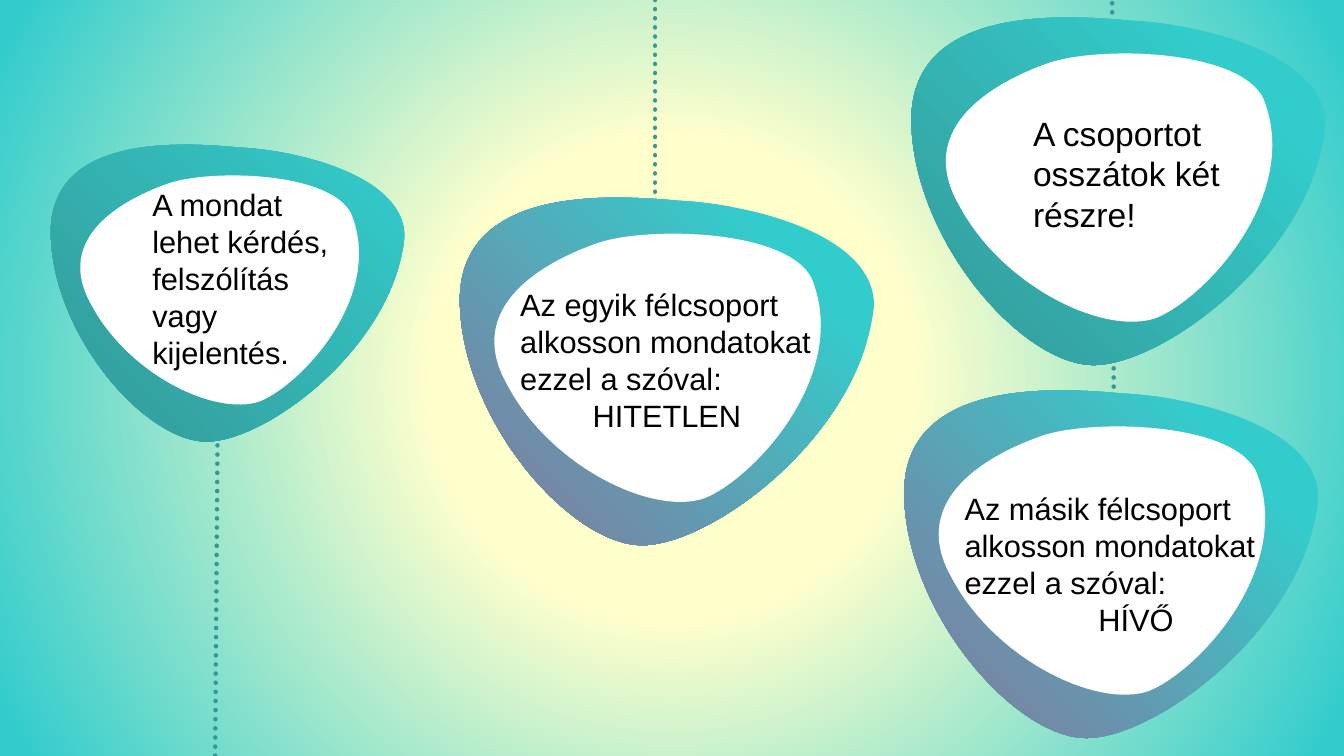
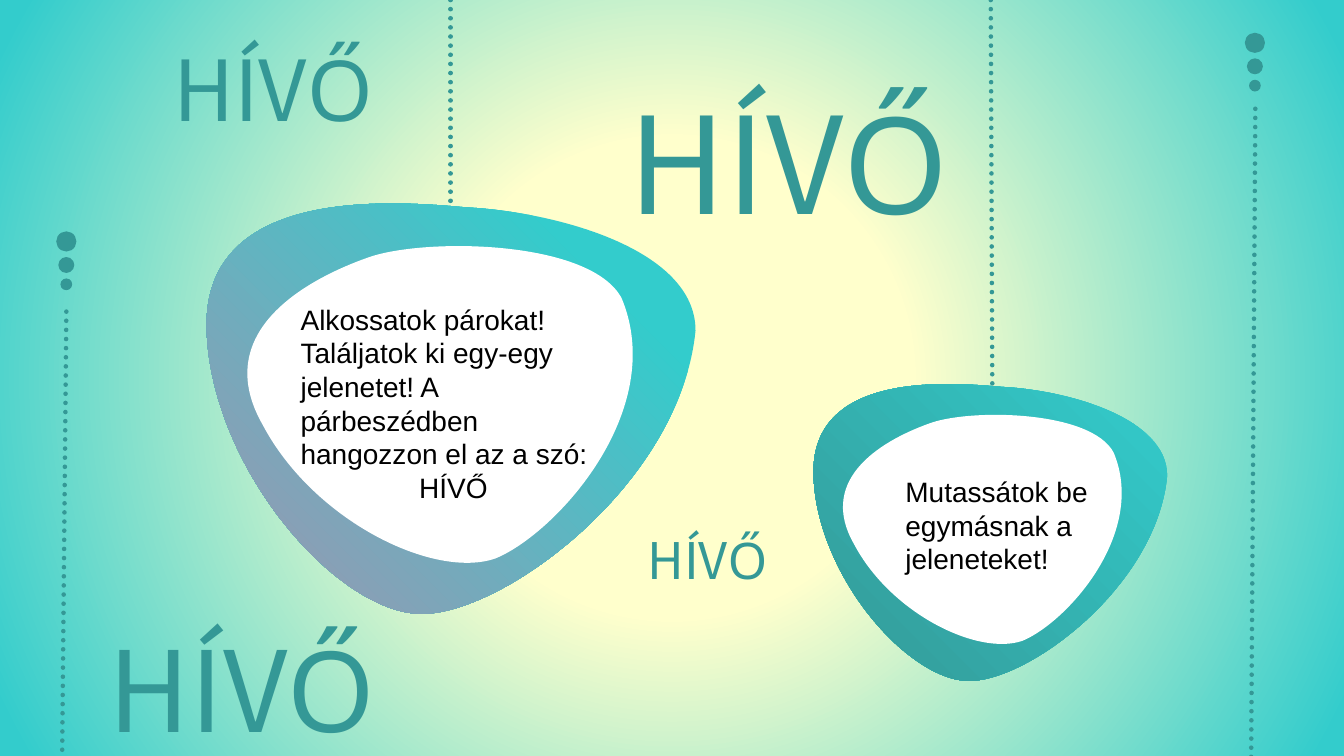
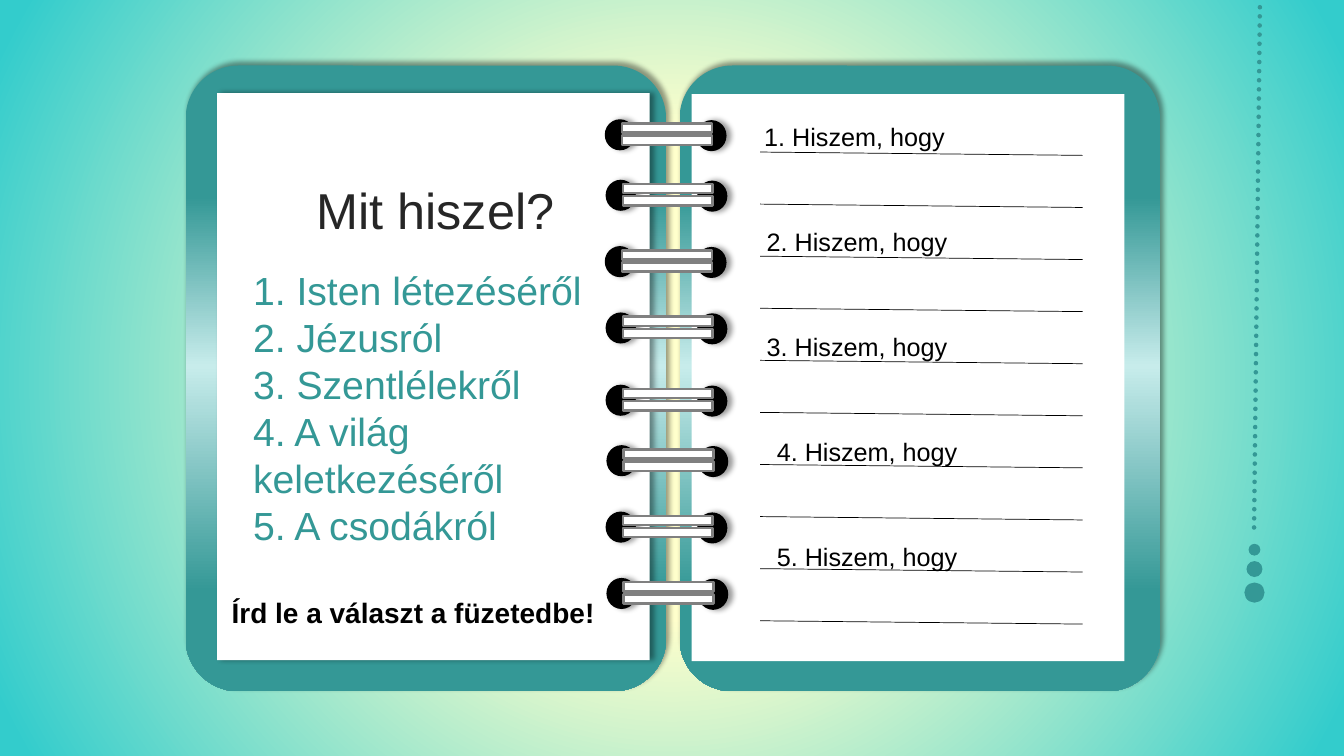
from dataclasses import dataclass

from lxml.etree import SubElement
from pptx import Presentation
from pptx.dml.color import RGBColor
from pptx.enum.dml import MSO_LINE
from pptx.enum.shapes import MSO_CONNECTOR, MSO_SHAPE
from pptx.enum.text import MSO_ANCHOR, PP_ALIGN
from pptx.oxml.ns import qn
from pptx.util import Emu, Pt

CELL = 76200  # the slide is a grid of 160 columns by 90 rows
COLS, ROWS = 160, 90

# Pebble outlines as shares of their own box: start, then three points per curve
PEBBLE_RATIO = 0.84
CORE_TILT = 332.1
RIM = [(0, .31), (-.01, -.03), (.35, -.01), (.53, .01), (.71, .02), (1, .11), (1, .31),
       (.97, .68), (.61, 1), (.44, 1), (.27, 1), (.01, .65), (0, .31)]
CORE = [(0, .31), (-.01, -.02), (.29, -.02), (.46, .01), (.62, .04), (1, .28), (1, .48),
        (.97, .85), (.55, 1.02), (.38, 1), (.21, .97), (0, .64), (0, .31)]


@dataclass(frozen=True)
class Theme:
    cream: str = "FFFFCC"
    aqua: str = "33CCCC"
    teal: str = "349896"
    mist: str = "C7ECEB"
    plum: str = "86759B"
    lilac: str = "A093B0"
    white: str = "FFFFFF"
    black: str = "000000"
    ink: str = "262626"
    grey: str = "808080"
    font: str = "Arial"
    word_font: str = "Noto Sans CJK JP"
    title: int = 36
    listing: int = 28
    large: int = 24
    body: int = 22
    small: int = 20
    label: int = 18
    dotted: float = 3.25
    hairline: float = 0.5
    wire: float = 1.75


def grid(*lengths):
    return [Emu(round(v * CELL)) for v in lengths]


def rgb(colour):
    return RGBColor.from_string(colour)


def fill_gradient(fill, owner, stops, angle=None):
    """Linear gradient at a clockwise angle, or circular from the centre."""
    fill.gradient()
    grad = owner.find(".//" + qn("a:gradFill"))
    grad.clear()
    grad.set("rotWithShape", "1")
    gs_list = SubElement(grad, qn("a:gsLst"))
    for pos, colour in stops:
        gs = SubElement(gs_list, qn("a:gs"), pos=str(pos * 1000))
        SubElement(gs, qn("a:srgbClr"), val=colour)
    if angle is None:
        circle = SubElement(grad, qn("a:path"), path="circle")
        SubElement(circle, qn("a:fillToRect"), dict.fromkeys("ltrb", "50000"))
    else:
        SubElement(grad, qn("a:lin"), ang=str(angle * 60000), scaled="0")


class Deck:
    def __init__(self, theme):
        self.t = theme
        self.prs = Presentation()
        self.prs.slide_width, self.prs.slide_height = grid(COLS, ROWS)
        master = self.prs.slide_master
        fill_gradient(master.background.fill, master._element,
                      [(31, theme.cream), (97, theme.aqua)])
        self.slide = None

    def new_slide(self, titled=False):
        self.slide = self.prs.slides.add_slide(self.prs.slide_layouts[5 if titled else 6])

    def finish(self, sp, colour=None, stops=None, angle=0, shadow=None, line=None):
        """Fill, outline and shadow of a shape."""
        sp.shadow.inherit = False
        if stops:
            fill_gradient(sp.fill, sp._element.spPr, stops, angle)
        else:
            sp.fill.solid()
            sp.fill.fore_color.rgb = rgb(colour)
        if line:
            sp.line.color.rgb = rgb(line)
            sp.line.width = Pt(self.t.wire)
        else:
            sp.line.fill.background()
        if shadow is not None:
            effects = sp._element.spPr.find(qn("a:effectLst"))
            outer = SubElement(effects, qn("a:outerShdw"), blurRad="50800", dist="38100",
                               dir=str(shadow * 60000), rotWithShape="0")
            clr = SubElement(outer, qn("a:srgbClr"), val=self.t.black)
            SubElement(clr, qn("a:alpha"), val="40000")

    def shape(self, kind, box, **style):
        sp = self.slide.shapes.add_shape(kind, *grid(*box))
        self.finish(sp, **style)
        return sp

    def outline(self, points, box, **style):
        """A closed chain of cubic curves inside a box."""
        x, y, w, h = grid(*box)
        builder = self.slide.shapes.build_freeform(x, y, scale=1.0)
        builder.add_line_segments([(x + w, y), (x + w, y + h), (x, y + h)], close=True)
        sp = builder.convert_to_shape()
        curve = sp._element.spPr.find(".//" + qn("a:path"))
        for child in list(curve):
            curve.remove(child)
        steps = [("a:moveTo", points[:1])]
        steps += [("a:cubicBezTo", points[i:i + 3]) for i in range(1, len(points), 3)]
        for tag, spots in steps:
            step = SubElement(curve, qn(tag))
            for px, py in spots:
                SubElement(step, qn("a:pt"), x=str(round(px * w)), y=str(round(py * h)))
        SubElement(curve, qn("a:close"))
        self.finish(sp, **style)
        return sp

    def pebble(self, x, y, w, deep, start=18):
        h = w * PEBBLE_RATIO
        self.outline(RIM, (x, y, w, h), stops=[(start, self.t.aqua), (100, deep)], angle=135)
        core = self.outline(CORE, (x + .13 * w, y + .06 * h, .77 * w, .8 * h),
                            colour=self.t.white)
        core.rotation = CORE_TILT

    def line(self, x1, y1, x2, y2, dotted=True):
        t = self.t
        cx = self.slide.shapes.add_connector(MSO_CONNECTOR.STRAIGHT, *grid(x1, y1, x2, y2))
        cx.line.color.rgb = rgb(t.teal if dotted else t.black)
        cx.line.width = Pt(t.dotted if dotted else t.hairline)
        sp_pr = cx._element.spPr
        if dotted:
            cx.line.dash_style = MSO_LINE.ROUND_DOT
            sp_pr.find(qn("a:ln")).set("cap", "rnd")
        SubElement(sp_pr, qn("a:effectLst"))

    def dots(self, x, y, way):
        """Three growing dots, upwards (way -1) or downwards (way 1)."""
        for size, offset in ((1.4, 0), (1.9, 2.3), (2.4, 5.1)):
            self.shape(MSO_SHAPE.OVAL, (x - size / 2, y + way * offset - size / 2, size, size),
                       colour=self.t.teal)

    def style(self, p, size, colour, font=None, bold=False, align=PP_ALIGN.LEFT):
        p.alignment = align
        p.font.size, p.font.bold = Pt(size), bold
        p.font.name = font or self.t.font
        p.font.color.rgb = rgb(colour)

    def text(self, box, lines, size, colour=None, closing=None, anchor=MSO_ANCHOR.TOP, **style):
        """Paragraphs of one style; closing adds a centred last one."""
        tf = self.slide.shapes.add_textbox(*grid(*box)).text_frame
        tf.word_wrap = True
        tf.vertical_anchor = anchor
        tf.text = "\n".join(lines + ([closing] if closing else []))
        for p in tf.paragraphs:
            self.style(p, size, colour or self.t.black, **style)
        if closing:
            tf.paragraphs[-1].alignment = PP_ALIGN.CENTER

    def title(self, box, text):
        sp = self.slide.shapes.title
        self.slide.shapes._spTree.append(sp._element)  # in front of the page
        sp.left, sp.top, sp.width, sp.height = grid(*box)
        tf = sp.text_frame
        tf.text = text
        tf.vertical_anchor = MSO_ANCHOR.MIDDLE
        self.style(tf.paragraphs[0], self.t.title, self.t.ink, align=PP_ALIGN.CENTER)

    def ring(self, x, y):
        for dx, dy in ((0, 0), (10.9, .1)):
            self.shape(MSO_SHAPE.FLOWCHART_CONNECTOR, (x + dx, y + dy, 3.6, 3.7),
                       colour=self.t.black, shadow=0)
        for dy in (.5, 1.95):
            self.shape(MSO_SHAPE.RECTANGLE, (x + 2.05, y + dy, 10.7, 1.1),
                       colour=self.t.white, line=self.t.grey)


def group_task(d):
    t = d.t
    d.new_slide()
    # Hanging lines
    for ends in ((26, 38.9, 25.6, 91.9), (132.4, -.7, 132.6, 49.2), (78, 0, 78, 24.6)):
        d.line(*ends)
    # Pebbles with their instructions
    d.pebble(6.05, 17.2, 42.1, t.teal, start=0)
    d.text((16.95, 21.5, 26.5, 27.8),
           ["A mondat lehet kérdés, felszólítás vagy kijelentés."], t.body)
    d.pebble(108.5, 2.05, 49.3, t.teal)
    d.text((121.8, 12.85, 35.6, 15.7), ["A csoportot osszátok két részre!"], t.large)
    d.pebble(54.75, 23.5, 49.3, t.plum)
    d.text((60.75, 33.4, 37.3, 23.4),
           ["Az egyik félcsoport alkosson mondatokat ezzel a szóval:"], t.body,
           closing="HITETLEN")
    d.pebble(107.65, 46.45, 49.3, t.plum)
    d.text((113.65, 57.7, 43.2, 23.4),
           ["Az másik félcsoport alkosson mondatokat ezzel a szóval:"], t.body,
           closing="HÍVŐ")


def pair_task(d):
    t = d.t
    d.new_slide()
    # Hanging lines and dots
    for ends in ((7.9, 37.1, 7.4, 90), (117.95, 0, 118.15, 49.9),
                 (53.65, 0, 53.65, 24.6), (149.45, 12.95, 148.95, 90.6)):
        d.line(*ends)
    d.dots(7.9, 33.85, -1)
    d.dots(149.4, 10.2, -1)
    # Pebbles with their instructions
    d.pebble(24.6, 24.2, 58.2, t.lilac)
    d.text((34.6, 35.4, 39.7, 30),
           ["Alkossatok párokat! Találjatok ki egy-egy jelenetet! "
            "A párbeszédben hangozzon el az a szó:"], t.small, closing="HÍVŐ ")
    d.pebble(96.85, 45.7, 42.1, t.teal, start=0)
    d.text((106.6, 55.9, 26.8, 17.5), ["Mutassátok be egymásnak a jeleneteket!"], t.small)
    # The key word in four sizes
    for box, size in (((1.45, 73.25, 54.7, 17.4), 80), ((66.55, 9, 54.7, 20.6), 96),
                      ((19.25, 3.9, 26.5, 13.3), 60), ((70.95, 62.4, 26.5, 8.5), 36)):
        d.text(box, ["HÍVŐ"], size, t.teal, font=t.word_font, align=PP_ALIGN.CENTER)


def notebook(d):
    t = d.t
    d.new_slide(titled=True)
    # Covers and pages
    for cover_x, page_x, page_y, shadow in ((22.1, 25.85, 11.1, 0), (80.9, 82.35, 11.2, None)):
        cover = d.shape(MSO_SHAPE.ROUNDED_RECTANGLE, (cover_x, 7.8, 57.2, 74.5), angle=90,
                        stops=[(21, t.teal), (48, t.mist), (84, t.teal)], shadow=315)
        cover.adjustments[0] = 0.11
        d.shape(MSO_SHAPE.RECTANGLE, (page_x, page_y, 51.5, 67.5),
                colour=t.white, shadow=shadow)
    # Spiral: two sets of four rings
    for x, y in ((72, 14.2), (72.1, 45.8)):
        for dx, dy in ((0, 0), (.1, 7.2), (0, 15.1), (.1, 23)):
            d.ring(x + dx, y + dy)
    # Left page
    d.title((26.1, 20.95, 51.5, 8), "Mit hiszel?")
    d.text((28.95, 31.1, 43.2, 40.8),
           ["1. Isten létezéséről", "2. Jézusról", "3. Szentlélekről",
            "4. A világ keletkezéséről", "5. A csodákról"], t.listing, t.teal)
    d.text((24.5, 68.9, 49.4, 8), ["Írd le a választ a füzetedbe!"], t.small, bold=True,
           align=PP_ALIGN.CENTER, anchor=MSO_ANCHOR.MIDDLE)
    # Right page: ruled lines and sentence openings
    for i in range(10):
        y = 18.1 + 6.2 * i
        d.line(90.5, y, 128.9, y + .4, dotted=False)
    for i, x in enumerate((89.8, 90.1, 90.1, 91.3, 91.3)):
        d.text((x, 13.8 + 12.5 * i, 39.6, 4.8), [f"{i + 1}. Hiszem, hogy"], t.label)
    # Dotted trail
    d.line(149.3, 62.8, 150, -.2)
    d.dots(149.35, 65.45, 1)


def main():
    d = Deck(Theme())
    for build in (group_task, pair_task, notebook):
        build(d)
    d.prs.save("out.pptx")


if __name__ == "__main__":
    main()
